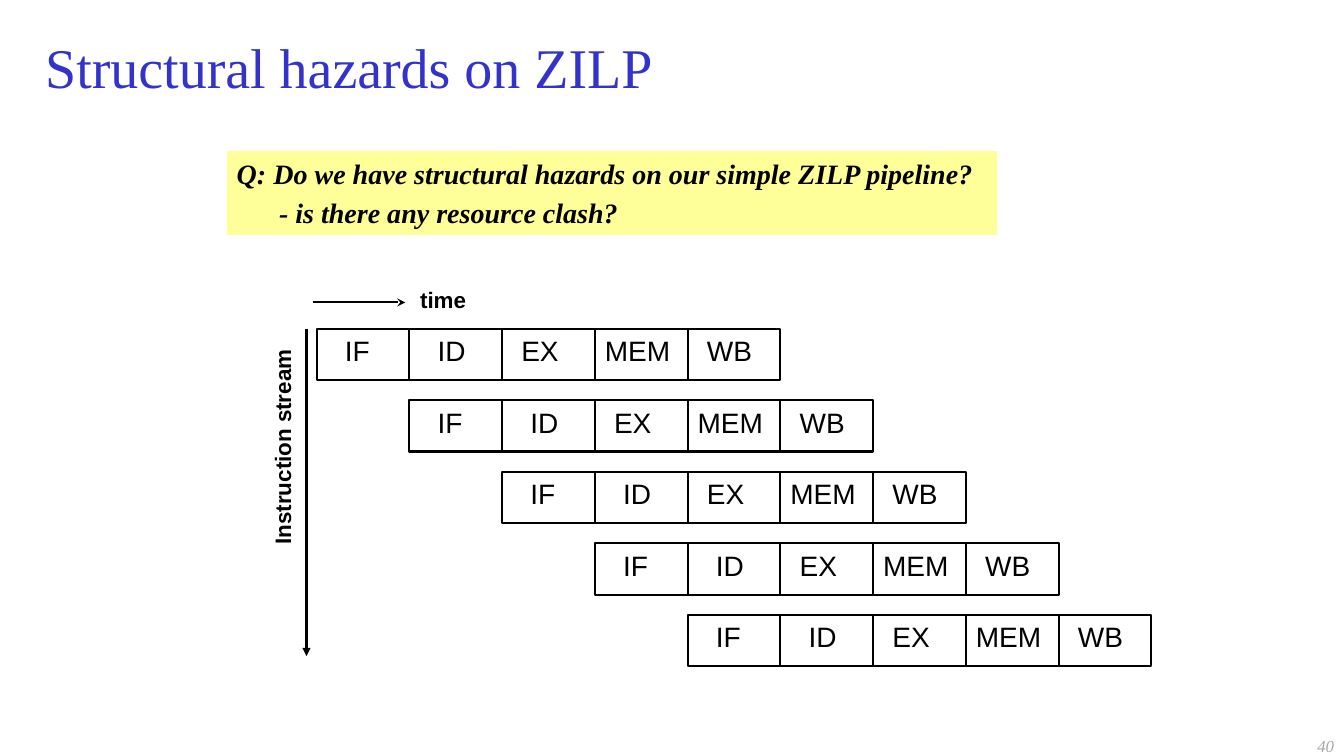
from dataclasses import dataclass

from lxml import etree
from pptx import Presentation
from pptx import util as u
from pptx.dml.color import RGBColor
from pptx.enum import shapes, text
from pptx.oxml.ns import qn

# Content
TITLE = "Structural hazards on ZILP"
QUESTION = [
    ("Q: Do we have structural hazards on our simple ZILP pipeline?", 0, 0),
    ("- is there any resource clash?", 0.42, 4),
]  # text, left indent in inches, space before in points
# Stage name and left inset, so labels line up down the diagram
STAGES = [("IF", 0.28), ("ID", 0.28), ("EX", 0.19), ("MEM", 0.1), ("WB", 0.19)]
INSTRUCTIONS = 5
TIME_LABEL = "time"
STREAM_LABEL = "Instruction stream"
PAGE = "40"


@dataclass(frozen=True)
class Theme:
    serif: str = "Times New Roman"
    sans: str = "Arial"
    ink: str = "000000"
    title: str = "3333CC"
    panel: str = "FFFF99"
    muted: str = "A6A6A6"
    title_size: int = 40
    body_size: int = 20
    label_size: int = 16
    page_size: int = 12
    line: float = 1.5


T = Theme()

# Pipeline grid
GRID_LEFT, GRID_TOP = 3.14, 3.26
CELL_W, CELL_H, ROW_STEP = 0.92, 0.51, 0.71

prs = Presentation()
prs.slide_width, prs.slide_height = u.Inches(13.33), u.Inches(7.5)
slide = prs.slides.add_slide(prs.slide_layouts[6])


def style(p, font, size, color, bold=False, italic=False, align=text.PP_ALIGN.LEFT):
    p.alignment = align
    f = p.font
    f.name, f.size, f.bold, f.italic = font, u.Pt(size), bold, italic
    f.color.rgb = RGBColor.from_string(color)


def add_label(words, box, *look, wrap=True, **options):
    sp = slide.shapes.add_textbox(*map(u.Inches, box))
    tf = sp.text_frame
    tf.word_wrap = wrap
    tf.vertical_anchor = text.MSO_ANCHOR.MIDDLE
    tf.text = words
    style(tf.paragraphs[0], *look, **options)
    return sp


def add_rect(x, y, w, h):
    sp = slide.shapes.add_shape(shapes.MSO_SHAPE.RECTANGLE, *map(u.Inches, (x, y, w, h)))
    sp.shadow.inherit = False
    sp.text_frame.word_wrap = True
    return sp


def add_arrow(x1, y1, x2, y2, head):
    cx = slide.shapes.add_connector(
        shapes.MSO_CONNECTOR.STRAIGHT, *map(u.Inches, (x1, y1, x2, y2)))
    cx.line.width = u.Pt(T.line)
    cx.line.color.rgb = RGBColor.from_string(T.ink)
    ln = cx._element.spPr.find(qn("a:ln"))
    etree.SubElement(ln, qn("a:tailEnd"), type=head)
    etree.SubElement(cx._element.spPr, qn("a:effectLst"))


def add_stage(name, inset, x, y):
    sp = add_rect(x, y, CELL_W, CELL_H)
    sp.fill.background()
    sp.line.width = u.Pt(T.line)
    sp.line.color.rgb = RGBColor.from_string(T.ink)
    tf = sp.text_frame
    tf.vertical_anchor = text.MSO_ANCHOR.MIDDLE
    tf.margin_left, tf.margin_right = u.Inches(inset), 0
    tf.margin_top, tf.margin_bottom = 0, u.Inches(0.08)
    tf.text = name
    style(tf.paragraphs[0], T.sans, T.body_size, T.ink)


# Title and page number
add_label(TITLE, (0.35, 0.25, 12.64, 0.82), T.serif, T.title_size, T.title)
add_label(PAGE, (10.22, 7.3, 3.11, 0.2), T.serif, T.page_size, T.muted,
          italic=True, align=text.PP_ALIGN.RIGHT)

# Question panel
panel = add_rect(2.25, 1.5, 7.64, 0.83)
panel.fill.solid()
panel.fill.fore_color.rgb = RGBColor.from_string(T.panel)
panel.line.fill.background()
tf = panel.text_frame
tf.vertical_anchor = text.MSO_ANCHOR.TOP
tf.margin_top, tf.margin_right = u.Inches(0.05), 0
for i, (words, indent, before) in enumerate(QUESTION):
    p = tf.add_paragraph() if i else tf.paragraphs[0]
    p.text = words
    p.space_before = u.Pt(before)
    p._p.get_or_add_pPr().set("marL", str(u.Inches(indent)))
    style(p, T.serif, T.body_size, T.ink, bold=True, italic=True)

# Axes
add_arrow(3.1, 3, 4.02, 3, "stealth")
add_label(TIME_LABEL, (4.03, 2.75, 0.73, 0.45), T.sans, T.label_size, T.ink,
          wrap=False, bold=True, align=text.PP_ALIGN.CENTER)
add_arrow(3.04, GRID_TOP, 3.04, 6.51, "triangle")
stream = add_label(STREAM_LABEL, (1.49, 4.23, 2.62, 0.41), T.sans, T.label_size,
                   T.ink, bold=True, align=text.PP_ALIGN.CENTER)
stream.rotation = 270

# Pipeline: each instruction starts one cycle after the one above
for row in range(INSTRUCTIONS):
    for col, (name, inset) in enumerate(STAGES):
        add_stage(name, inset, GRID_LEFT + (row + col) * CELL_W, GRID_TOP + row * ROW_STEP)

prs.save("out.pptx")
